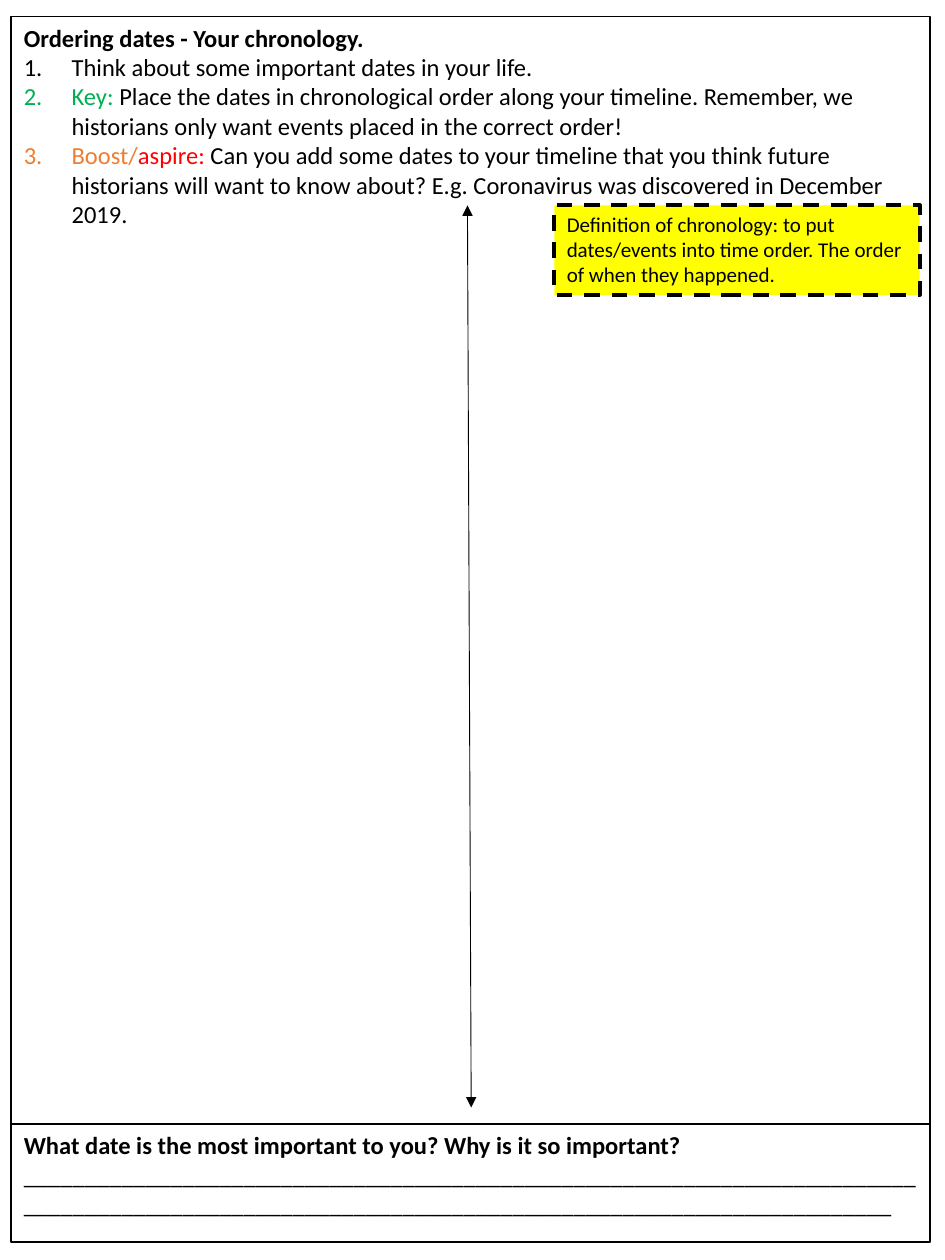
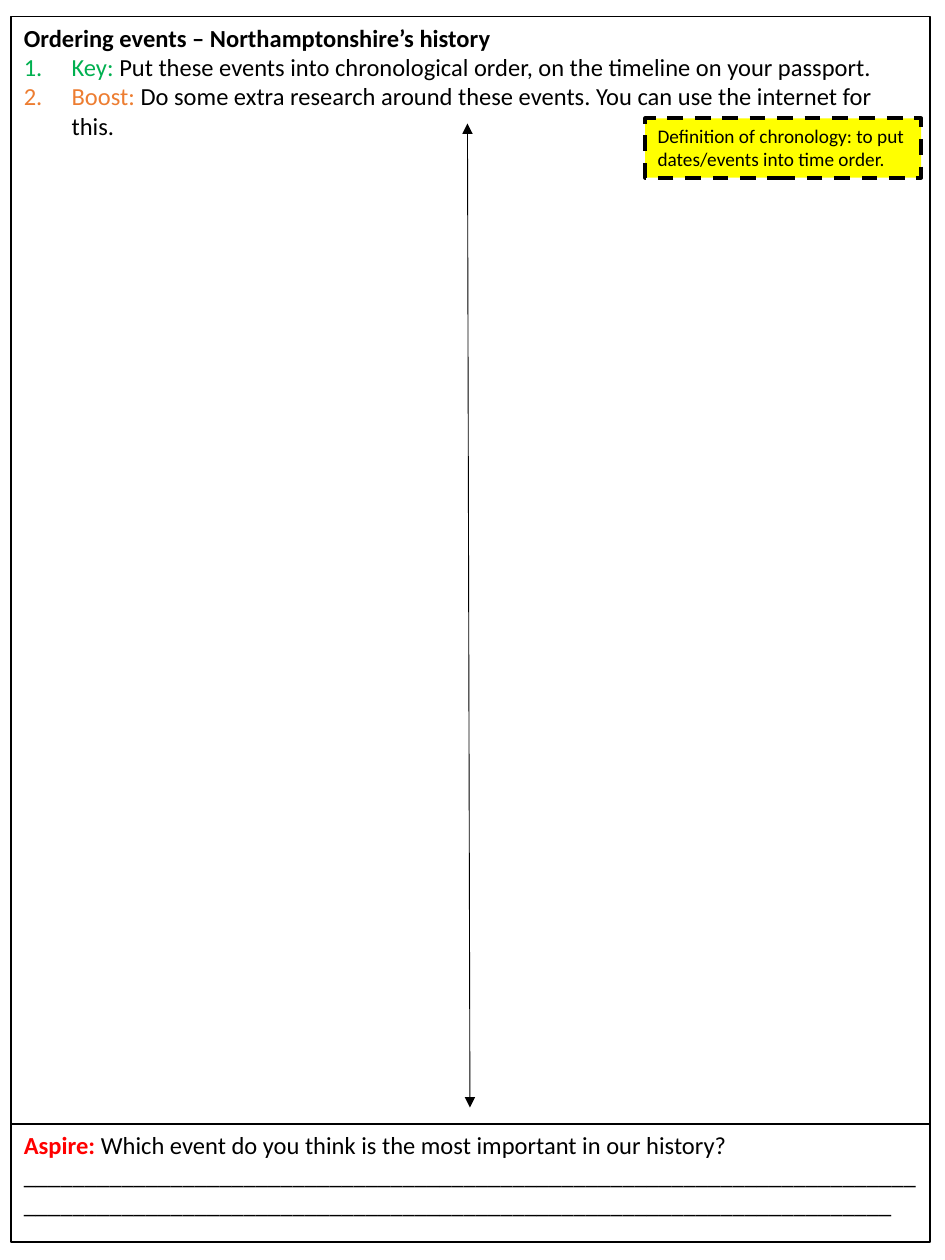
from dataclasses import dataclass

from lxml import etree
from pptx import Presentation
from pptx.dml.color import RGBColor
from pptx.enum.dml import MSO_LINE
from pptx.enum.shapes import MSO_CONNECTOR, MSO_SHAPE
from pptx.enum.text import MSO_ANCHOR, MSO_AUTO_SIZE, PP_ALIGN
from pptx.oxml.ns import qn
from pptx.util import Inches, Pt

# Shared style
BLACK = RGBColor(0x00, 0x00, 0x00)
WHITE = RGBColor(0xFF, 0xFF, 0xFF)
YELLOW = RGBColor(0xFF, 0xFF, 0x00)
KEY_GREEN = RGBColor(0x00, 0xB0, 0x50)
BOOST_ORANGE = RGBColor(0xED, 0x7D, 0x31)
ASPIRE_RED = RGBColor(0xFF, 0x00, 0x00)
FONT = "Calibri"
BODY_SIZE = 14
RECTANGLE = MSO_SHAPE.RECTANGLE
STRAIGHT = MSO_CONNECTOR.STRAIGHT
DASH = MSO_LINE.DASH
LEFT = PP_ALIGN.LEFT
TOP = MSO_ANCHOR.TOP
GROW = MSO_AUTO_SIZE.SHAPE_TO_FIT_TEXT

# Shared page frame, in inches
FRAME_LEFT, FRAME_TOP, FRAME_WIDTH = 0.09, 0.13, 7.29
ANSWER_TOP, ANSWER_HEIGHT = 8.92, 0.94
TIMELINE_LEFT, TIMELINE_BOTTOM = 3.71, 8.79
NUMBER_INDENT = 0.38
WRITING_LINE = "_" * 144


@dataclass(frozen=True)
class Span:
    text: str
    color: RGBColor = BLACK
    bold: bool = False


@dataclass(frozen=True)
class Area:
    left: float
    top: float
    width: float
    height: float


@dataclass(frozen=True)
class Worksheet:
    heading: str
    tasks: list[list[Span]]
    timeline_top: float
    timeline_end_x: float
    definition: str
    definition_area: Area
    definition_size: int
    question: list[Span]


WORKSHEETS = [
    Worksheet(
        heading="Ordering dates - Your chronology.",
        tasks=[
            [Span("Think about some important dates in your life.")],
            [Span("Key: ", KEY_GREEN),
             Span("Place the dates in chronological order along your timeline. "
                  "Remember, we historians only want events placed in the correct order!")],
            [Span("Boost/", BOOST_ORANGE), Span("aspire: ", ASPIRE_RED),
             Span("Can you add some dates to your timeline that you think future "
                  "historians will want to know about? E.g. Coronavirus was "
                  "discovered in December 2019.")],
        ],
        timeline_top=1.63,
        timeline_end_x=3.74,
        definition="Definition of chronology: to put dates/events into time order. "
                   "The order of when they happened.",
        definition_area=Area(4.4, 1.63, 2.9, 0.71),
        definition_size=12,
        question=[Span("What date is the most important to you? "
                       "Why is it so important?", bold=True)],
    ),
    Worksheet(
        heading="Ordering events – Northamptonshire’s history",
        tasks=[
            [Span("Key: ", KEY_GREEN),
             Span("Put these events into chronological order, on the timeline "
                  "on your passport.")],
            [Span("Boost: ", BOOST_ORANGE),
             Span("Do some extra research around these events. "
                  "You can use the internet for this.")],
        ],
        timeline_top=0.98,
        timeline_end_x=3.73,
        definition="Definition of chronology: to put dates/events into time order.",
        definition_area=Area(5.12, 0.94, 2.19, 0.47),
        definition_size=11,
        question=[Span("Aspire: ", ASPIRE_RED, bold=True),
                  Span("Which event do you think is the most important in our history?")],
    ),
]


def add_text(frame, spans: list[Span], *, size: int = BODY_SIZE,
             first: bool = False, numbered: bool = False) -> None:
    """Write one paragraph, numbered when asked."""
    para = frame.paragraphs[0] if first else frame.add_paragraph()
    para.alignment = LEFT
    for span in spans:
        run = para.add_run()
        run.text = span.text
        run.font.name = FONT
        run.font.size = Pt(size)
        run.font.bold = span.bold
        run.font.color.rgb = span.color
    if numbered:
        properties = para._p.get_or_add_pPr()
        properties.set("marL", str(Inches(NUMBER_INDENT)))
        properties.set("indent", str(-Inches(NUMBER_INDENT)))
        etree.SubElement(properties, qn("a:buFont"), typeface="+mj-lt")
        etree.SubElement(properties, qn("a:buAutoNum"), type="arabicPeriod")


def add_box(page, area: Area, *, fill: RGBColor = WHITE, line_width: float = 1,
            dashed: bool = False):
    """Draw an outlined rectangle and return its text frame."""
    box = page.shapes.add_shape(RECTANGLE, Inches(area.left), Inches(area.top),
                                Inches(area.width), Inches(area.height))
    box.shadow.inherit = False
    box.fill.solid()
    box.fill.fore_color.rgb = fill
    box.line.color.rgb = BLACK
    box.line.width = Pt(line_width)
    if dashed:
        box.line.dash_style = DASH
    frame = box.text_frame
    frame.word_wrap = True
    frame.vertical_anchor = TOP
    return frame


def add_timeline(page, top: float, end_x: float) -> None:
    """Draw the double-headed timeline arrow."""
    arrow = page.shapes.add_connector(STRAIGHT, Inches(TIMELINE_LEFT), Inches(top),
                                      Inches(end_x), Inches(TIMELINE_BOTTOM))
    arrow.line.color.rgb = BLACK
    arrow.line.width = Pt(0.5)
    line = arrow.line._get_or_add_ln()
    for end in ("a:headEnd", "a:tailEnd"):
        etree.SubElement(line, qn(end), type="triangle")
    etree.SubElement(arrow._element.spPr, qn("a:effectLst"))


def add_worksheet(deck, sheet: Worksheet) -> None:
    page = deck.slides.add_slide(deck.slide_layouts[6])

    # Heading and numbered tasks
    tasks = add_box(page, Area(FRAME_LEFT, FRAME_TOP, FRAME_WIDTH,
                               ANSWER_TOP - FRAME_TOP))
    add_text(tasks, [Span(sheet.heading, bold=True)], first=True)
    for task in sheet.tasks:
        add_text(tasks, task, numbered=True)

    add_timeline(page, sheet.timeline_top, sheet.timeline_end_x)

    # Definition note
    note = add_box(page, sheet.definition_area, fill=YELLOW, line_width=2.25, dashed=True)
    note.auto_size = GROW
    add_text(note, [Span(sheet.definition)], size=sheet.definition_size, first=True)

    # Question with writing lines
    answer = add_box(page, Area(FRAME_LEFT, ANSWER_TOP, FRAME_WIDTH, ANSWER_HEIGHT))
    add_text(answer, sheet.question, first=True)
    add_text(answer, [Span(WRITING_LINE)])


def main() -> None:
    deck = Presentation()
    deck.slide_width = Inches(7.5)
    deck.slide_height = Inches(10)
    for sheet in WORKSHEETS:
        add_worksheet(deck, sheet)
    deck.save("out.pptx")


if __name__ == "__main__":
    main()
